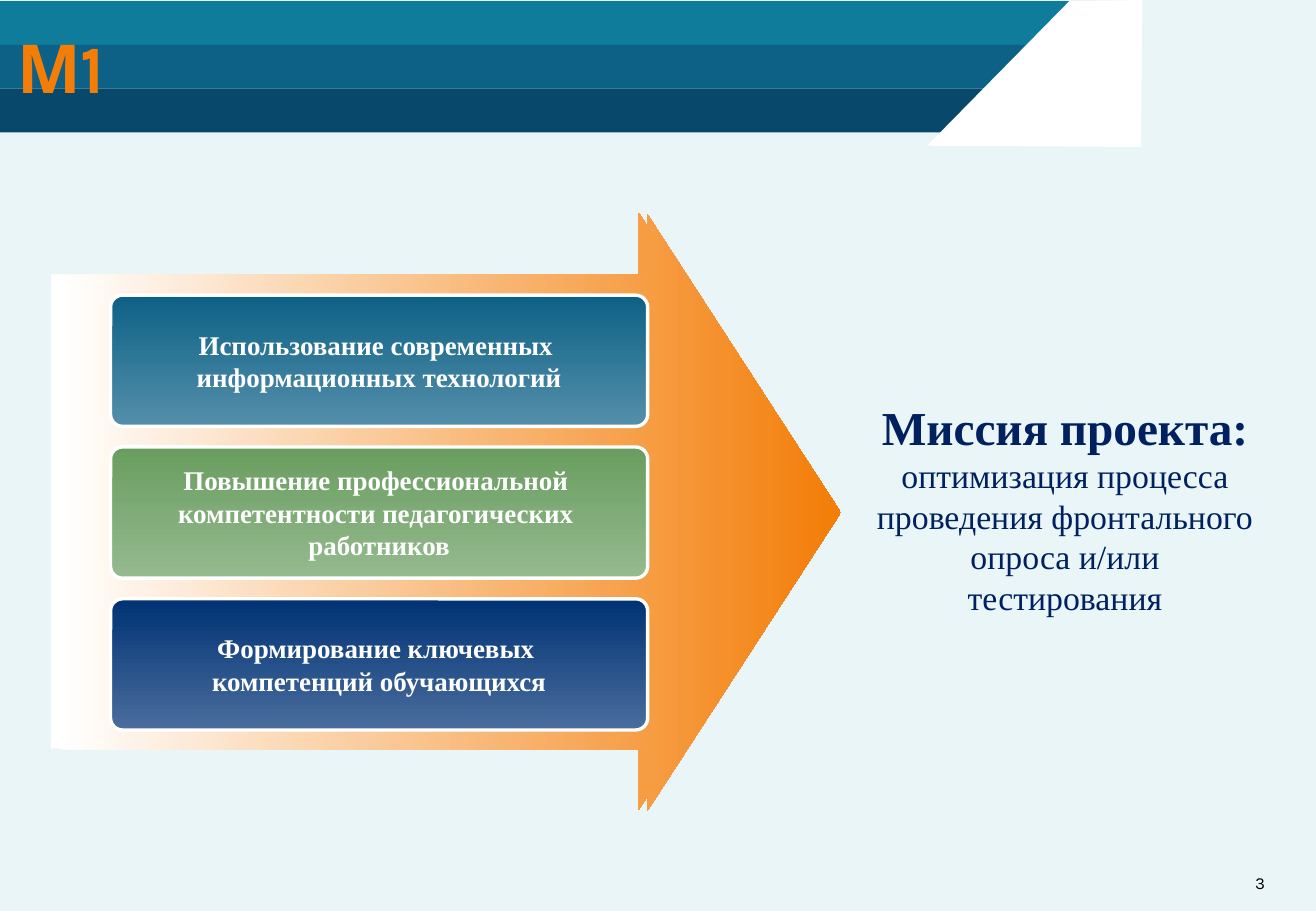
from pptx import Presentation
from pptx.dml.color import RGBColor
from pptx.enum.shapes import MSO_SHAPE
from pptx.enum.text import MSO_ANCHOR, PP_ALIGN
from pptx.util import Pt

RECT = MSO_SHAPE.RECTANGLE
ROUND = MSO_SHAPE.ROUNDED_RECTANGLE
ARROW = MSO_SHAPE.RIGHT_ARROW
MIDDLE = MSO_ANCHOR.MIDDLE
LEFT, CENTER = PP_ALIGN.LEFT, PP_ALIGN.CENTER

PX = 9144  # 100 px to the inch
SERIF, SANS = "Times New Roman", "Karla"
ORANGE, WHITE, NAVY = "F37D07", "FFFFFF", "002060"

BANDS = ["0F7C9C", "0D6186", "08486B"]
GOALS = [
    ("0D6186", "548FAA",
     ["Использование современных ", "информационных технологий"]),
    ("699D5F", "95BA8F",
     ["Повышение профессиональной ", "компетентности педагогических ",
      "работников"]),
    ("003274", "4A6D9D",
     ["Формирование ключевых ", "компетенций обучающихся"]),
]


def color(code):
    return RGBColor.from_string(code)


def paint(shape, code):
    shape.fill.solid()
    shape.fill.fore_color.rgb = color(code)


def blend(shape, start, end, angle):
    shape.fill.gradient()
    shape.fill.gradient_angle = angle
    for stop, code in zip(shape.fill.gradient_stops, (start, end)):
        stop.color.rgb = color(code)


def add_shape(slide, kind, x, y, w, h, *adjust):
    shape = slide.shapes.add_shape(kind, x * PX, y * PX, w * PX, h * PX)
    shape.shadow.inherit = False
    shape.line.fill.background()
    for i, value in enumerate(adjust):
        shape.adjustments[i] = value
    return shape


def set_frame(frame, wrap, inset=None):
    frame.word_wrap = wrap
    frame.vertical_anchor = MIDDLE
    if inset is not None:
        frame.margin_left = frame.margin_right = inset
        frame.margin_top = frame.margin_bottom = inset


def add_run(para, text, size, font, code, bold=False):
    run = para.add_run()
    run.text = text
    run.font.size = Pt(size)
    run.font.name = font
    run.font.bold = bold
    run.font.color.rgb = color(code)


def add_header(slide):
    for i, code in enumerate(BANDS):
        paint(add_shape(slide, RECT, 0, 1 + 36 * i, 900, 36), code)
    # White slanted corner
    pen = slide.shapes.build_freeform(939, 121, scale=PX)
    pen.add_line_segments([(763, 120), (880, 1), (940, 0)], close=True)
    corner = pen.convert_to_shape()
    corner.shadow.inherit = False
    corner.line.fill.background()
    paint(corner, WHITE)


def add_title(slide, text):
    title = slide.shapes.title
    title.left, title.top = 14 * PX, 21 * PX
    title.width, title.height = 808 * PX, 67 * PX
    set_frame(title.text_frame, True, 0)
    para = title.text_frame.paragraphs[0]
    para.alignment = LEFT
    add_run(para, text, 40, SANS, ORANGE, True)
    # Bring the title in front of the bands
    slide.shapes._spTree.append(title._element)


def add_arrow(slide, x, y):
    arrow = add_shape(slide, ARROW, x, y, 643, 492, 0.793, 0.324)
    blend(arrow, WHITE, ORANGE, 0)


def add_goal(slide, y, start, end, lines):
    card = add_shape(slide, ROUND, 91, y, 442, 108, 0.091)
    blend(card, start, end, 270)
    card.line.color.rgb = color(WHITE)
    card.line.width = Pt(2)
    frame = card.text_frame
    set_frame(frame, False)
    for i, line in enumerate(lines):
        para = frame.add_paragraph() if i else frame.paragraphs[0]
        para.alignment = CENTER
        add_run(para, line, 16, SERIF, WHITE, True)


def add_mission(slide):
    box = add_shape(slide, ROUND, 700, 296, 353, 244, 0.091)
    box.fill.background()
    set_frame(box.text_frame, True)
    para = box.text_frame.paragraphs[0]
    para.alignment = CENTER
    add_run(para, "Миссия проекта: ", 28, SERIF, NAVY, True)
    add_run(para, "оптимизация процесса проведения фронтального "
            "опроса и/или тестирования", 20, SERIF, NAVY)


def add_number(slide, text):
    box = slide.shapes.add_textbox(1033 * PX, 718 * PX, 25 * PX, 17 * PX)
    set_frame(box.text_frame, False, 0)
    add_run(box.text_frame.paragraphs[0], text, 10, SANS, "000000")


def main():
    deck = Presentation()
    deck.slide_width, deck.slide_height = 1083 * PX, 750 * PX
    slide = deck.slides.add_slide(deck.slide_layouts[5])
    paint(slide.background, "E9F5F7")

    # Header and page number
    add_header(slide)
    add_number(slide, "3")
    add_title(slide, "М1")

    # Doubled arrow around the mission text
    add_arrow(slide, 42, 175)
    add_mission(slide)
    add_arrow(slide, 49, 176)

    # Goals on the arrow
    for i, (start, end, lines) in enumerate(GOALS):
        add_goal(slide, 243 + 125 * i, start, end, lines)

    deck.save("out.pptx")


if __name__ == "__main__":
    main()
